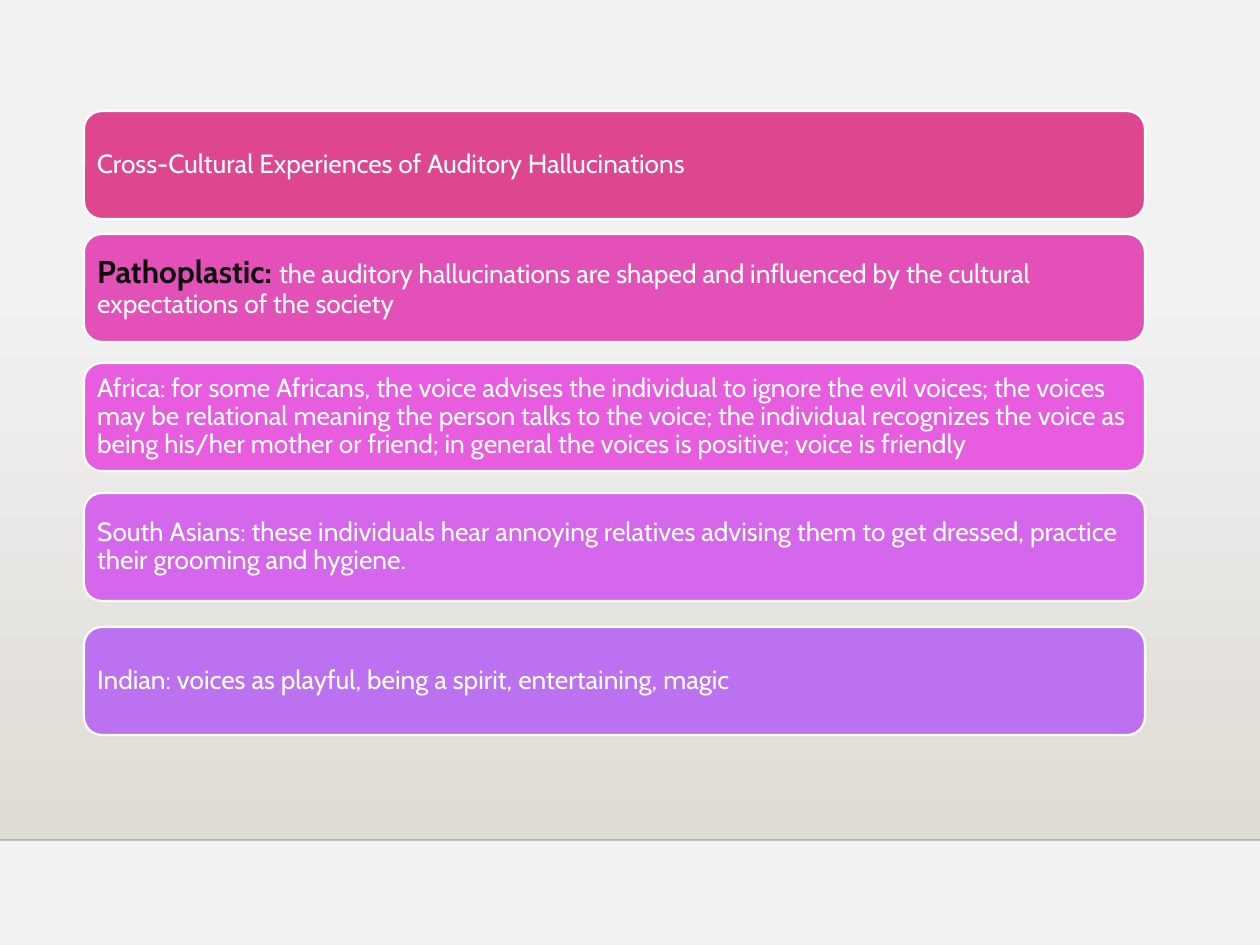
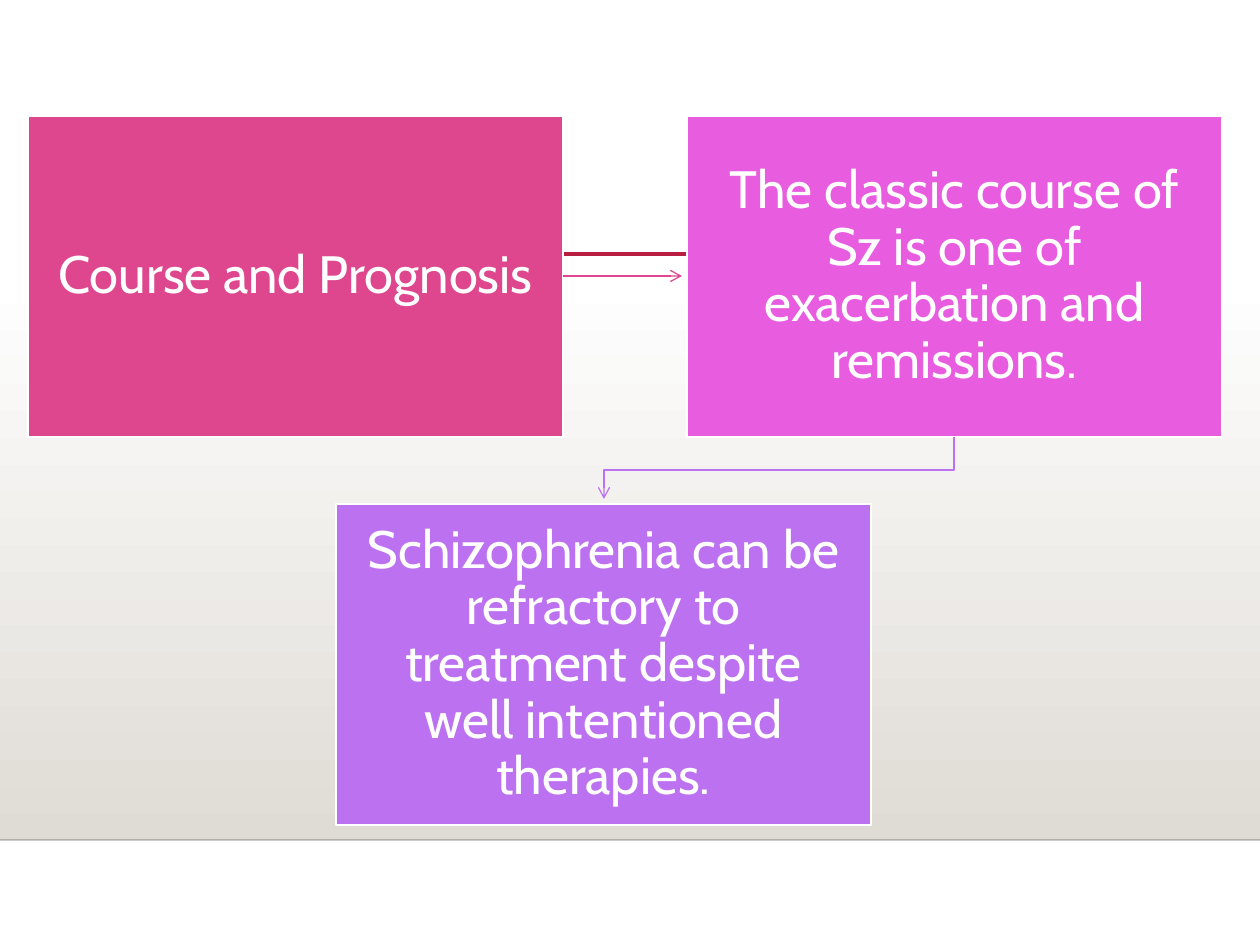
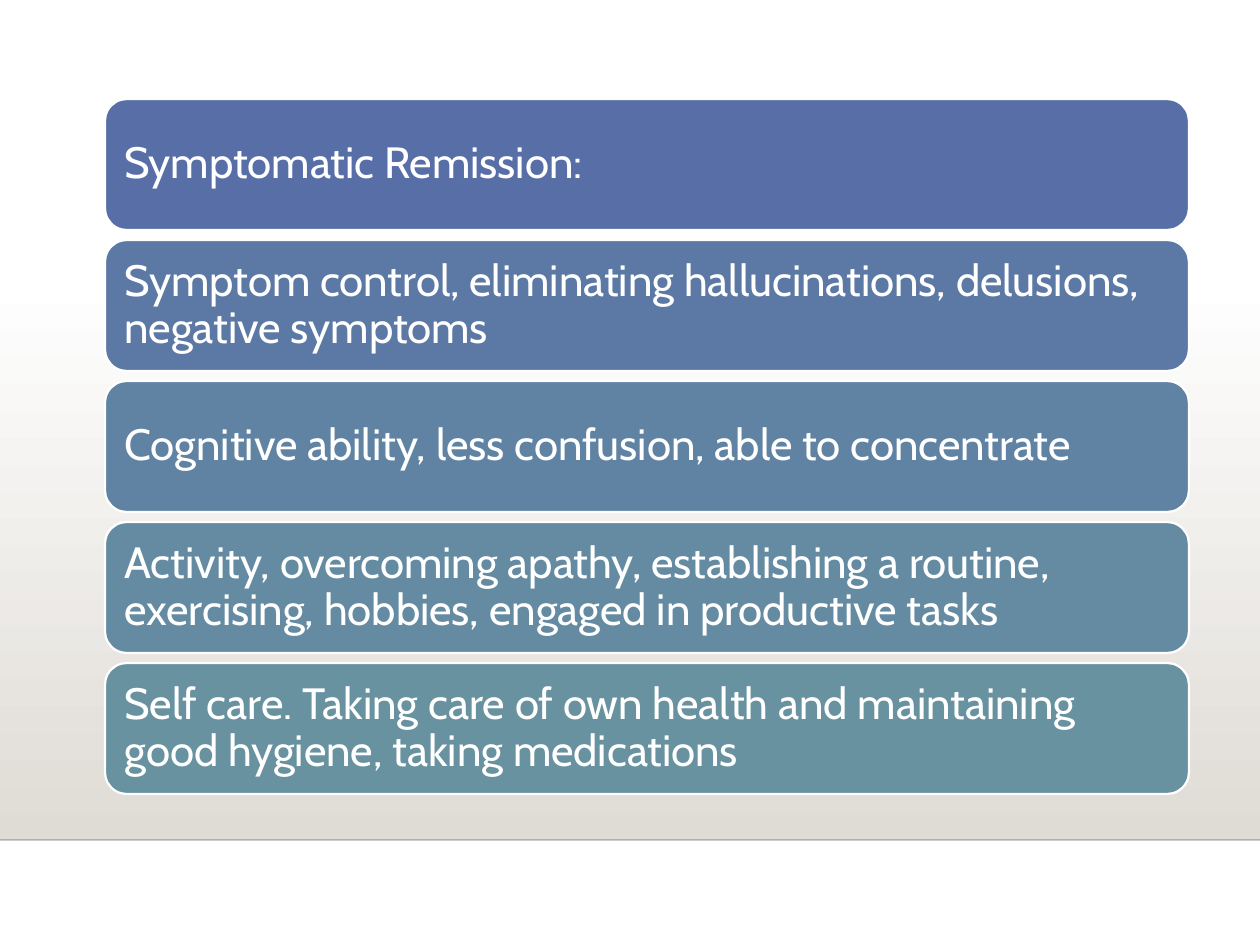
import lxml.etree
import pptx
import pptx.dml.color
import pptx.enum.shapes
import pptx.enum.text
import pptx.oxml.ns
import pptx.util

RGBColor = pptx.dml.color.RGBColor
SHAPES = pptx.enum.shapes.MSO_SHAPE
ALIGN = pptx.enum.text.PP_ALIGN
STRAIGHT = pptx.enum.shapes.MSO_CONNECTOR.STRAIGHT

EMU_PER_PX = 914400 / 126
SLIDE_WIDTH, SLIDE_HEIGHT = 1260, 945
FLOOR_TOP, FLOOR_BOTTOM = 277, 840
TITLE_ONLY = 5
FONT = "Cabin"
CORNER_INSET = 0.0488

WHITE = RGBColor(0xFF, 0xFF, 0xFF)
PALE_GREY = RGBColor(0xF2, 0xF2, 0xF2)
FLOOR_STONE = RGBColor(0xDF, 0xDB, 0xD5)
FLOOR_EDGE = RGBColor(0x00, 0x00, 0x01)
NEAR_BLACK = RGBColor(0x0D, 0x0D, 0x0D)
CRIMSON = RGBColor(0xB7, 0x1E, 0x42)
ROSE = RGBColor(0xDE, 0x47, 0x8E)
PINK = RGBColor(0xE3, 0x51, 0xB8)
MAGENTA = RGBColor(0xE8, 0x5C, 0xE0)
ORCHID = RGBColor(0xD4, 0x67, 0xEC)
VIOLET = RGBColor(0xBC, 0x72, 0xF0)
INDIGO = RGBColor(0x58, 0x6E, 0xA6)
DENIM = RGBColor(0x5C, 0x79, 0xA5)
STEEL = RGBColor(0x60, 0x83, 0xA3)
SLATE = RGBColor(0x64, 0x8B, 0xA2)
TEAL = RGBColor(0x68, 0x92, 0xA0)

CULTURES = [
    (111, ROSE, "Cross-Cultural Experiences of Auditory Hallucinations"),
    (234, PINK, "the auditory hallucinations are shaped and influenced by the "
                "cultural expectations of the society"),
    (363, MAGENTA, "Africa: for some Africans, the voice advises the individual to "
                   "ignore the evil voices; the voices may be relational meaning the "
                   "person talks to the voice; the individual recognizes the voice as "
                   "being his/her mother or friend; in general the voices is positive; "
                   "voice is friendly"),
    (493, ORCHID, "South Asians: these individuals hear annoying relatives advising "
                  "them to get dressed, practice their grooming and hygiene."),
    (627, VIOLET, "Indian: voices as playful, being a spirit, entertaining, magic"),
]
COURSE = [
    (28, 116, ROSE, "Course and Prognosis"),
    (687, 116, MAGENTA, "The classic course of Sz is one of exacerbation and remissions."),
    (336, 504, VIOLET, "Schizophrenia can be refractory to treatment despite well "
                       "intentioned therapies."),
]
REMISSION = [
    (INDIGO, "Symptomatic Remission:"),
    (DENIM, "Symptom control, eliminating hallucinations, delusions, negative symptoms"),
    (STEEL, "Cognitive ability, less confusion, able to concentrate"),
    (SLATE, "Activity, overcoming apathy, establishing a routine, exercising, hobbies, "
            "engaged in productive tasks"),
    (TEAL, "Self care. Taking care of own health and maintaining good hygiene, "
           "taking medications"),
]


def px(length):
    """Turn pixels into EMU."""
    return pptx.util.Emu(round(length * EMU_PER_PX))


def add_child(parent, tag, **attributes):
    """Append a DrawingML element to its parent."""
    return lxml.etree.SubElement(parent, pptx.oxml.ns.qn(tag), attributes)


def add_rule(slide, start, end, colour, points, opacity=100):
    """Draw a straight line without a shadow."""
    rule = slide.shapes.add_connector(STRAIGHT, *map(px, start + end))
    rule.line.width = pptx.util.Pt(points)
    rule.line.color.rgb = colour
    if opacity < 100:
        tint = rule._element.spPr.find(".//" + pptx.oxml.ns.qn("a:srgbClr"))
        add_child(tint, "a:alpha", val=str(opacity * 1000))
    add_child(rule._element.spPr, "a:effectLst")
    return rule


def add_arrowhead(route):
    """Put an open arrowhead at the end of a route."""
    add_child(route.line._get_or_add_ln(), "a:tailEnd", type="arrow")


def add_bent_arrow(slide, points, colour):
    """Draw an arrow that turns at each inner point."""
    start, *turns = points
    outline = slide.shapes.build_freeform(*start, scale=EMU_PER_PX)
    outline.add_line_segments(turns, close=False)
    route = outline.convert_to_shape()
    route.shadow.inherit = False
    route.fill.background()
    route.line.color.rgb = colour
    route.line.width = pptx.util.Pt(0.75)
    add_arrowhead(route)


def add_staged_slide(deck, backdrop):
    """Add a slide with the shared backdrop and shaded floor."""
    slide = deck.slides.add_slide(deck.slide_layouts[TITLE_ONLY])
    slide.background.fill.solid()
    slide.background.fill.fore_color.rgb = backdrop
    floor = slide.shapes.add_shape(
        SHAPES.RECTANGLE, 0, px(FLOOR_TOP), px(SLIDE_WIDTH), px(FLOOR_BOTTOM - FLOOR_TOP))
    floor.shadow.inherit = False
    floor.line.fill.background()
    floor.fill.gradient()
    floor.fill.gradient_angle = 270
    for stop, colour in zip(floor.fill.gradient_stops, (backdrop, FLOOR_STONE)):
        stop.color.rgb = colour
    add_rule(slide, (0, FLOOR_BOTTOM), (SLIDE_WIDTH, FLOOR_BOTTOM), FLOOR_EDGE, 1, 20)
    return slide


def write_phrases(holder, phrases, align, inset):
    """Write (text, size, colour, bold) phrases as one centred-height paragraph."""
    frame = holder.text_frame
    frame.word_wrap = True
    frame.auto_size = pptx.enum.text.MSO_AUTO_SIZE.NONE
    frame.vertical_anchor = pptx.enum.text.MSO_ANCHOR.MIDDLE
    frame.margin_left = frame.margin_right = px(inset)
    frame.margin_top = frame.margin_bottom = px(inset)
    paragraph = frame.paragraphs[0]
    paragraph.alignment = align
    paragraph.line_spacing = 0.9
    for text, size, colour, bold in phrases:
        phrase = paragraph.add_run()
        phrase.text = text
        phrase.font.name = FONT
        phrase.font.size = pptx.util.Pt(size)
        phrase.font.color.rgb = colour
        phrase.font.bold = bold


def add_card(slide, box, outline, colour):
    """Draw a coloured card with a white edge."""
    card = slide.shapes.add_shape(outline, *map(px, box))
    card.shadow.inherit = False
    card.fill.solid()
    card.fill.fore_color.rgb = colour
    card.line.color.rgb = WHITE
    card.line.width = pptx.util.Pt(1.25)
    return card


def lay_title_over(slide, card, box, corner):
    """Place the title placeholder on the text area of a card."""
    left, top, width, height = box
    title = slide.shapes.title
    title.left, title.top = px(left + corner), px(top + corner)
    title.width, title.height = px(width - 2 * corner), px(height - 2 * corner)
    card._element.addnext(title._element)
    return title


def add_bar(slide, box, colour, phrases, inset, heading):
    """Add a rounded bar with left-aligned text."""
    card = add_card(slide, box, SHAPES.ROUNDED_RECTANGLE, colour)
    corner = round(box[3] * CORNER_INSET)
    holder = lay_title_over(slide, card, box, corner) if heading else card
    write_phrases(holder, phrases, ALIGN.LEFT, inset)


def add_cultures_slide(deck):
    """Build the slide on hallucinations across cultures."""
    slide = add_staged_slide(deck, PALE_GREY)
    for row, (top, colour, text) in enumerate(CULTURES):
        phrases = [(text, 15, WHITE, False)]
        if row == 1:
            phrases.insert(0, ("Pathoplastic: ", 18, NEAR_BLACK, True))
        add_bar(slide, (84, top, 1061, 108), colour, phrases, 8, row == 0)


def add_course_slide(deck):
    """Build the slide on course and prognosis."""
    slide = add_staged_slide(deck, WHITE)
    add_rule(slide, (199, 254), (1105, 254), CRIMSON, 2.5)
    for step, (left, top, colour, text) in enumerate(COURSE):
        box = (left, top, 535, 321)
        card = add_card(slide, box, SHAPES.RECTANGLE, colour)
        holder = lay_title_over(slide, card, box, 0) if step == 0 else card
        write_phrases(holder, [(text, 30, WHITE, False)], ALIGN.CENTER, 26)
    add_arrowhead(add_rule(slide, (563, 276), (682, 276), ROSE, 0.75))
    add_bent_arrow(slide, [(954, 437), (954, 470), (604, 470), (604, 499)], VIOLET)


def add_remission_slide(deck):
    """Build the slide on symptomatic remission."""
    slide = add_staged_slide(deck, WHITE)
    for row, (colour, text) in enumerate(REMISSION):
        box = (105, 99 + 141 * row, 1084, 131)
        add_bar(slide, box, colour, [(text, 25, WHITE, False)], 13, row == 0)


def main():
    """Build and save the deck."""
    deck = pptx.Presentation()
    deck.slide_width, deck.slide_height = px(SLIDE_WIDTH), px(SLIDE_HEIGHT)
    add_cultures_slide(deck)
    add_course_slide(deck)
    add_remission_slide(deck)
    deck.save("out.pptx")


if __name__ == "__main__":
    main()
